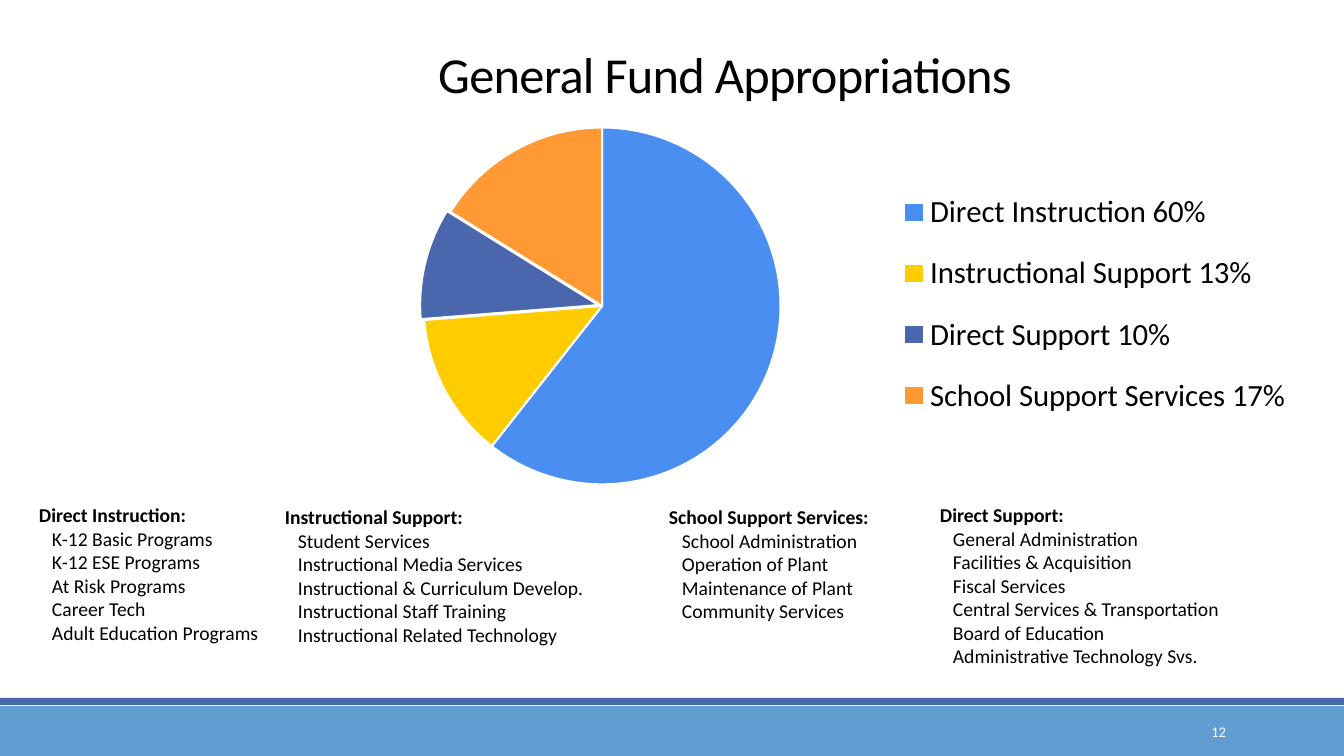
from pptx import Presentation
from pptx.chart.data import CategoryChartData
from pptx.dml.color import RGBColor
from pptx.enum.chart import XL_CHART_TYPE as ChartType, XL_LEGEND_POSITION as LegendPosition
from pptx.enum.shapes import MSO_SHAPE as Shape
from pptx.enum.text import MSO_ANCHOR as Anchor, PP_ALIGN as Align
from pptx.oxml import parse_xml
from pptx.oxml.ns import nsdecls, qn
from pptx.util import Emu, Pt

PX = 914400 / 100.8
FONT = "Calibri"
BLACK, WHITE, INDIGO = "000000", "FFFFFF", "4A66AC"

SHARES = [
    ("Direct Instruction 60%", 60, "4A8EF2"),
    ("Instructional Support 13%", 13, "FFCC00"),
    ("Direct Support 10%", 10, INDIGO),
    ("School Support Services 17%", 16, "FF9933"),
]

PROGRAMS = [
    ((29, 498, 283, 152), "Direct Instruction:",
     ["K-12 Basic Programs", "K-12 ESE Programs", "At Risk Programs",
      "Career Tech", "Adult Education Programs"]),
    ((275, 500, 384, 152), "Instructional Support:",
     ["Student Services", "Instructional Media Services",
      "Instructional & Curriculum Develop.", "Instructional Staff Training",
      "Instructional Related Technology"]),
    ((930, 498, 384, 176), "Direct Support:",
     ["General Administration", "Facilities & Acquisition", "Fiscal Services",
      "Central Services & Transportation", "Board of Education",
      "Administrative Technology Svs."]),
    ((659, 500, 246, 129), "School Support Services:",
     ["School Administration", "Operation of Plant", "Maintenance of Plant",
      "Community Services"]),
]


def px(length):
    return Emu(round(length * PX))


def place(box):
    return [px(length) for length in box]


def rgb(color):
    return RGBColor.from_string(color)


def style(font, size, color=BLACK, bold=False):
    font.name = FONT
    font.size = Pt(size)
    font.bold = bold
    font.color.rgb = rgb(color)


def add_band(slide, box, color):
    band = slide.shapes.add_shape(Shape.RECTANGLE, *place(box))
    band.shadow.inherit = False
    band.fill.solid()
    band.fill.fore_color.rgb = rgb(color)
    band.line.fill.background()


def add_frame(slide, box, anchor=Anchor.TOP):
    frame = slide.shapes.add_textbox(*place(box)).text_frame
    frame.word_wrap = True
    frame.vertical_anchor = anchor
    return frame


def add_line(slide, box, text, size, color, align):
    line = add_frame(slide, box, Anchor.MIDDLE).paragraphs[0]
    line.text = text
    line.alignment = align
    style(line.font, size, color)
    return line


def add_programs(slide, box, heading, programs):
    frame = add_frame(slide, box)
    frame.text = "\n".join([heading, *programs])
    for index, line in enumerate(frame.paragraphs):
        style(line.font, 14, bold=index == 0)
        if index:
            line._p.get_or_add_pPr().set("marL", str(px(13)))


def manual_layout(x, y, w, h, inner=False):
    target = '<c:layoutTarget val="inner"/>' if inner else ""
    return parse_xml(
        f'<c:layout {nsdecls("c")}><c:manualLayout>{target}'
        '<c:xMode val="edge"/><c:yMode val="edge"/>'
        f'<c:x val="{x}"/><c:y val="{y}"/><c:w val="{w}"/><c:h val="{h}"/>'
        '</c:manualLayout></c:layout>')


def lay_out(parent, layout, index):
    for old in parent.findall(qn("c:layout")):
        parent.remove(old)
    parent.insert(index, layout)


def explode(series, index, percent):
    slice_xml = series._element.get_or_add_dPt_for_point(index)
    explosion = parse_xml(f'<c:explosion {nsdecls("c")} val="{percent}"/>')
    slice_xml.find(qn("c:spPr")).addprevious(explosion)


def add_pie(slide, box):
    shares = CategoryChartData()
    shares.categories = [label for label, _, _ in SHARES]
    shares.add_series("Series 1", [value for _, value, _ in SHARES])
    chart = slide.shapes.add_chart(ChartType.PIE, *place(box), shares).chart
    chart.has_title = False
    style(chart.font, 10)
    chart.has_legend = True
    legend = chart.legend
    legend.position = LegendPosition.RIGHT
    legend.include_in_layout = False
    style(legend.font, 22)

    pie = chart.plots[0]
    pie.vary_by_categories = True
    series = pie.series[0]
    for index, (_, _, color) in enumerate(SHARES):
        look = series.points[index].format
        look.fill.solid()
        look.fill.fore_color.rgb = rgb(color)
        look.line.color.rgb = rgb(WHITE)
        look.line.width = Pt(1.5)
    explode(series, 2, 2)

    plot_area = chart._chartSpace.chart.plotArea
    lay_out(plot_area, manual_layout(0.15, 0.04, 0.33, 0.92, inner=True), 0)
    lay_out(legend._element, manual_layout(0.58, 0.15, 0.38, 0.69), 1)


def main():
    deck = Presentation()
    deck.slide_width, deck.slide_height = px(1344), px(756)
    slide = deck.slides.add_slide(deck.slide_layouts[6])

    add_band(slide, (0, 706, 1344, 50), "629DD1")
    add_band(slide, (0, 698, 1344, 7), INDIGO)
    add_line(slide, (1092, 712, 144, 40), "12", 10.5, WHITE, Align.RIGHT)
    title = add_line(slide, (106, -2, 1238, 160), "General Fund Appropriations",
                     36, BLACK, Align.CENTER)
    title.line_spacing = 0.85
    title.runs[0].font._element.set("spc", "-50")
    add_pie(slide, (261, 112, 1083, 388))
    for box, heading, programs in PROGRAMS:
        add_programs(slide, box, heading, programs)

    deck.save("out.pptx")


if __name__ == "__main__":
    main()
